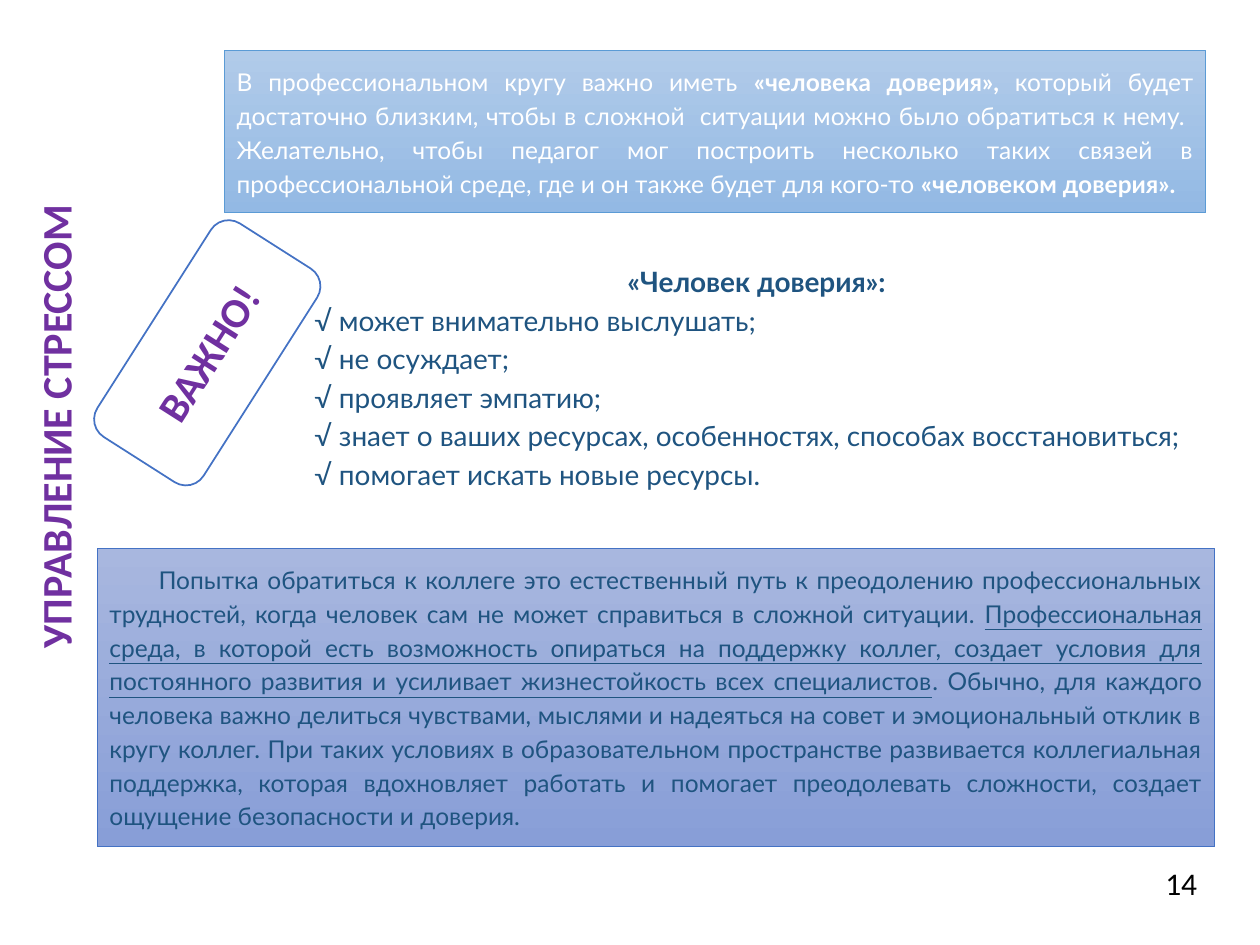
from pptx import Presentation
from pptx import util as u
from pptx.dml import color
from pptx.enum import shapes, text

BLUE, PURPLE, WHITE = "1F5480", "7030A0", "FFFFFF"
LEFT, MID, JUST = text.PP_ALIGN.LEFT, text.PP_ALIGN.CENTER, text.PP_ALIGN.JUSTIFY
RECT, ROUND = shapes.MSO_SHAPE.RECTANGLE, shapes.MSO_SHAPE.ROUNDED_RECTANGLE

POINTS = [
    "может внимательно выслушать;",
    "не осуждает;",
    "проявляет эмпатию;",
    "знает о ваших ресурсах, особенностях, способах восстановиться;",
    "помогает искать новые ресурсы.",
]
CIRCLE = [
    ("В профессиональном кругу важно иметь ", ""),
    ("«человека доверия», ", "b"),
    ("который будет достаточно близким, чтобы в сложной  ситуации можно было "
     "обратиться к нему.  Желательно, чтобы педагог мог построить несколько таких "
     "связей в профессиональной среде, где и он также будет для кого-то", ""),
    (" «человеком доверия».", "b"),
]
SUPPORT = [
    ("Попытка обратиться к коллеге это естественный путь к преодолению "
     "профессиональных трудностей, когда человек сам не может справиться в сложной "
     "ситуации. ", ""),
    ("Профессиональная среда, в которой есть возможность опираться на поддержку "
     "коллег, создает условия для постоянного развития и усиливает жизнестойкость "
     "всех специалистов", "u"),
    (". Обычно, для каждого человека важно делиться чувствами, мыслями и надеяться "
     "на совет и эмоциональный отклик в кругу коллег. При таких условиях в "
     "образовательном пространстве развивается коллегиальная поддержка, которая "
     "вдохновляет работать и помогает преодолевать сложности, создает ощущение "
     "безопасности и доверия.", ""),
]


def rgb(code):
    return color.RGBColor.from_string(code)


class Deck:
    def __init__(self):
        self.prs = Presentation()
        self.prs.slide_width, self.prs.slide_height = u.Inches(10), u.Inches(7.5)
        self.slide = self.prs.slides.add_slide(self.prs.slide_layouts[5])

    def put_text(self, shape, paras, size, font, tint, align=LEFT, pad=0.05,
                 indent=0, gap=1.0, anchor=text.MSO_ANCHOR.TOP):
        """Fill a shape with paragraphs, each a list of (words, marks) runs."""
        frame = shape.text_frame
        frame.word_wrap = True
        frame.auto_size = text.MSO_AUTO_SIZE.NONE
        frame.vertical_anchor = anchor
        frame.margin_left = frame.margin_right = u.Inches(0.1)
        frame.margin_top = frame.margin_bottom = u.Inches(pad)
        for i, runs in enumerate(paras):
            para = frame.add_paragraph() if i else frame.paragraphs[0]
            para.alignment = align
            para.line_spacing = gap
            if indent:
                para._p.get_or_add_pPr().set("indent", str(u.Inches(indent)))
            for words, marks in runs:
                run = para.add_run()
                run.text = words
                run.font.size, run.font.name = u.Pt(size), font
                run.font.bold, run.font.underline = "b" in marks, "u" in marks
                run.font.color.rgb = rgb(tint)

    def title(self, words, x, y, w, h, turn):
        shape = self.slide.shapes.title
        shape.left, shape.top, shape.width, shape.height = map(u.Inches, (x, y, w, h))
        shape.rotation = turn
        self.put_text(shape, [[(words, "b")]], 24, "Calibri", PURPLE)

    def label(self, words, x, y, w, h):
        box = self.slide.shapes.add_textbox(*map(u.Inches, (x, y, w, h)))
        self.put_text(box, [[(words, "")]], 18, "Calibri", "000000")

    def panel(self, x, y, w, h, fill, line=None, width=0.5, kind=RECT):
        """Add a shape; two fill colours make a top-to-bottom gradient."""
        shape = self.slide.shapes.add_shape(kind, *map(u.Inches, (x, y, w, h)))
        shape.shadow.inherit = False
        if len(fill) == 2:
            shape.fill.gradient()
            shape.fill.gradient_angle = 270
            for stop, code in zip(shape.fill.gradient_stops, fill):
                stop.color.rgb = rgb(code)
        else:
            shape.fill.solid()
            shape.fill.fore_color.rgb = rgb(fill[0])
        if line:
            shape.line.color.rgb = rgb(line)
            shape.line.width = u.Pt(width)
        else:
            shape.line.fill.background()
        return shape


def main():
    deck = Deck()
    body = dict(font="Lato", align=JUST, pad=0.1, gap=1.15)

    deck.title("УПРАВЛЕНИЕ СТРЕССОМ", -1.63, 2.93, 4.13, 0.5, 270)

    traits = deck.panel(1.95, 1.96, 7.72, 2.06, [WHITE])
    lines = [[("«Человек доверия»:", "b")]] + [[(f" √ {p}", "")] for p in POINTS]
    deck.put_text(traits, lines, 16, tint=BLUE, indent=0.39, **body)
    traits.text_frame.paragraphs[0].alignment = MID

    circle = deck.panel(1.78, 0.4, 7.79, 1.29, ["B1CBE9", "93B9E4"], "5B9BD5")
    deck.put_text(circle, [CIRCLE], 14, tint=WHITE, **body)

    support = deck.panel(0.77, 4.35, 8.87, 2.37, ["A8B7DF", "889ED7"], "4472C4")
    deck.put_text(support, [SUPPORT], 14, tint=BLUE, indent=0.39, **body)

    badge = deck.panel(0.64, 2.3, 2.01, 1, [WHITE], "4472C4", 1, ROUND)
    badge.rotation = 302.5
    deck.put_text(badge, [[("ВАЖНО!", "b")]], 24, "Calibri", PURPLE, MID,
                  anchor=text.MSO_ANCHOR.MIDDLE)

    deck.label("14", 9.15, 6.81, 0.59, 0.4)
    deck.prs.save("out.pptx")


if __name__ == "__main__":
    main()
